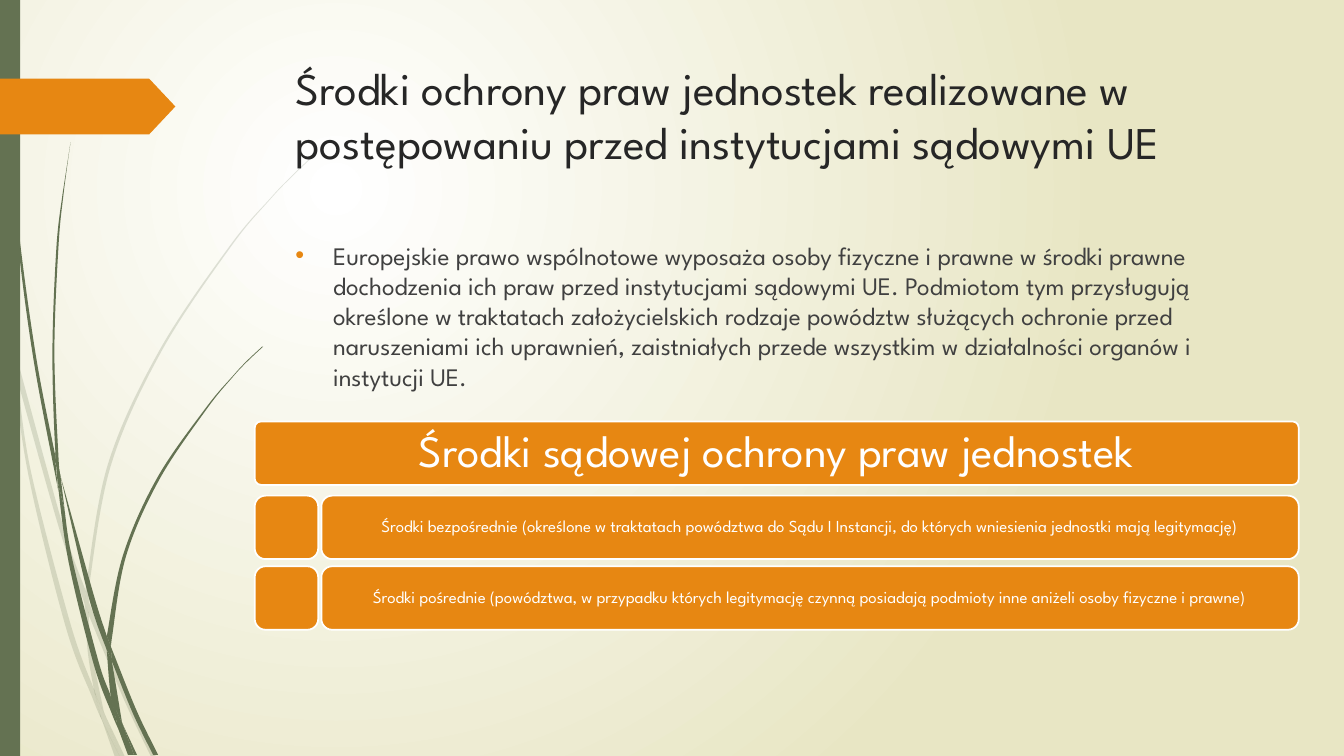
from itertools import chain
from lxml import etree
from pptx import Presentation
from pptx.dml.color import RGBColor
from pptx.enum import shapes, text
from pptx.oxml import ns
from pptx.util import Cm, Pt

FONT = "League Spartan"
COLORS = {
    "paper": "FFFFFF", "sand": "E8E6C4", "leaf": "647252", "orange": "E78712",
    "title": "262626", "body": "404040", "white": "FFFFFF",
}
GRASS_UNIT = 0.0254

PALE_GRASS = [
    ("11,350 9,322 0,282", "0,299 10,344 11,350"),
    ("14,345 62,520 85,586", "84,599 58,522 17,376"),
    ("88,596 92,607 127,692 155,751", "150,751 123,694 88,610"),
    ("119,751 124,751", "105,711"),
    ("11,350 17,376 31,469 70,619 93,683", "99,707 101,714 92,693 65,621 28,470 11,350"),
    ("84,599 87,646 93,683 96,692 105,711", "103,706 91,646 88,610 88,608 84,599"),
    ("88,584 110,462 160,349 229,245 268,198 290,175 312,154",
     "312,153 289,175 268,197 228,244 158,348 107,461 85,584", "85,586 88,596"),
    ("101,714 114,751", "119,751"),
    ("88,608 88,610 88,596", "85,586 84,599"),
    ("96,692 93,683 99,707 101,714 119,751", "105,711"),
]
DARK_GRASS = [
    ("3,0 4,48 7,110 17,233 33,355 56,477 57,481",
     "55,457 55,453 36,355 19,232 8,109 5,48 4,0"),
    ("60,472 88,592 106,645", "106,633 106,631 93,590 60,472"),
    ("110,641 113,649 136,706 157,749", "152,749 132,708 111,656"),
    ("57,477 68,557 93,659 111,708 117,722", "116,717 110,691 98,657 72,556 64,505"),
    ("60,472 58,453 54,349 58,245 63,193 70,141", "62,193 56,245 52,349 55,449 60,472"),
    ("133,749 136,749", "122,719"),
    ("57,477 64,505", "60,472 55,449 55,453"),
    ("111,633 125,552 158,476 205,406 231,374 245,359 261,344",
     "260,344 245,358 231,373 204,405 156,474 122,551 106,631", "110,641"),
    ("117,722 127,749", "131,749"),
    ("106,645 110,691 116,706 122,719", "121,716 111,656 109,651"),
    ("106,645 109,651 111,656 110,641", "106,631"),
    ("116,706 110,691 116,717 117,722 130,749", "133,749 122,719"),
]


def paint(shape, color, line=None):
    shape.shadow.inherit = False
    shape.fill.solid()
    shape.fill.fore_color.rgb = RGBColor.from_string(COLORS[color])
    if line:
        shape.line.color.rgb = RGBColor.from_string(COLORS[line])
        shape.line.width = Pt(1.25)
    else:
        shape.line.fill.background()


def write(paragraph, words, size, color):
    run = paragraph.add_run()
    run.text = words
    run.font.name = FONT
    run.font.size = Pt(size)
    run.font.color.rgb = RGBColor.from_string(COLORS[color])


def bend_edges(blade, edge_lengths):
    nodes = [pt.getparent() for pt in blade.element.iter(ns.qn("a:pt"))]
    corners = [(int(node[0].get("x")), int(node[0].get("y"))) for node in nodes]
    first = 0
    for length in edge_lengths:
        last = first + length - 1
        for i in range(first + 1, last + 1):
            before, after = corners[max(i - 2, first)], corners[min(i + 1, last)]
            start, end = corners[i - 1], corners[i]
            leave = [s + (e - b) / 6 for b, s, e in zip(before, start, end)]
            arrive = [e - (a - s) / 6 for s, e, a in zip(start, end, after)]
            curve = etree.Element(ns.qn("a:cubicBezTo"))
            for x, y in (leave, arrive, end):
                etree.SubElement(curve, ns.qn("a:pt"), x=str(round(x)), y=str(round(y)))
            nodes[i].getparent().replace(nodes[i], curve)
        first = last + 1


def add_grass(slide, box, blades, opacity=None):
    left, top = box
    clump = slide.shapes.add_group_shape()
    for edges in blades:
        pairs = [edge.split() for edge in edges]
        corners = [map(int, pair.split(",")) for pair in chain.from_iterable(pairs)]
        outline = [(Cm(left + x * GRASS_UNIT), Cm(top + y * GRASS_UNIT)) for x, y in corners]
        builder = clump.shapes.build_freeform(*outline[0])
        builder.add_line_segments(outline[1:], close=True)
        blade = builder.convert_to_shape()
        bend_edges(blade, map(len, pairs))
        paint(blade, "leaf")
        if opacity:
            tint = blade.element.spPr.find(ns.qn("a:solidFill"))[0]
            etree.SubElement(tint, ns.qn("a:alpha"), val=str(opacity * 1000))


def add_background(slide):
    fill = slide.background.fill
    fill.gradient()
    for stop, color in zip(fill.gradient_stops, ("paper", "sand")):
        stop.color.rgb = RGBColor.from_string(COLORS[color])
    gradient = slide.element.find(".//" + ns.qn("a:gradFill"))
    gradient.remove(gradient.find(ns.qn("a:lin")))
    circle = etree.SubElement(gradient, ns.qn("a:path"), path="circle")
    etree.SubElement(circle, ns.qn("a:fillToRect"),
                     l="50000", t="50000", r="100000", b="100000")


def add_side_decor(slide, box):
    left, top, width, height = box
    add_grass(slide, (left, top), PALE_GRASS, opacity=20)
    add_grass(slide, (left, top), DARK_GRASS)
    stripe = slide.shapes.add_shape(
        shapes.MSO_SHAPE.RECTANGLE, Cm(left), Cm(top), Cm(width), Cm(height))
    paint(stripe, "leaf")
    arrow = slide.shapes.add_shape(
        shapes.MSO_SHAPE.PENTAGON, Cm(left), Cm(top + 1.98), Cm(4.42), Cm(1.41))
    arrow.adjustments[0] = 0.47
    paint(arrow, "orange")


def place(placeholder, box):
    placeholder.left, placeholder.top, placeholder.width, placeholder.height = map(Cm, box)
    placeholder.element.getparent().append(placeholder.element)
    frame = placeholder.text_frame
    frame.word_wrap = True
    frame.auto_size = text.MSO_AUTO_SIZE.NONE
    frame.vertical_anchor = text.MSO_ANCHOR.TOP
    paragraph = frame.paragraphs[0]
    paragraph.alignment = text.PP_ALIGN.LEFT
    return paragraph


def add_heading(slide, box):
    heading = place(slide.shapes.title, box)
    write(heading, "Środki ochrony praw jednostek realizowane w postępowaniu "
          "przed instytucjami sądowymi UE", 32.4, "title")


def add_introduction(slide, box):
    introduction = place(slide.placeholders[1], box)
    introduction.space_before = Pt(10)
    properties = introduction._p.get_or_add_pPr()
    properties.set("marL", str(Cm(0.95)))
    properties.set("indent", str(-Cm(0.95)))
    bullet_color = etree.SubElement(properties, ns.qn("a:buClr"))
    etree.SubElement(bullet_color, ns.qn("a:srgbClr"), val=COLORS["orange"])
    etree.SubElement(properties, ns.qn("a:buChar"), char="•")
    write(introduction, "Europejskie prawo wspólnotowe wyposaża osoby fizyczne i prawne w środki "
          "prawne dochodzenia ich praw przed instytucjami sądowymi UE. Podmiotom tym przysługują "
          "określone w traktatach założycielskich rodzaje powództw służących ochronie przed "
          "naruszeniami ich uprawnień, zaistniałych przede wszystkim w działalności organów i "
          "instytucji UE.", 18, "body")


def add_tile(diagram, box, rounding, words=None, size=12):
    tile = diagram.shapes.add_shape(shapes.MSO_SHAPE.ROUNDED_RECTANGLE, *map(Cm, box))
    tile.adjustments[0] = rounding
    paint(tile, "orange", line="white")
    if words:
        frame = tile.text_frame
        frame.word_wrap = True
        frame.vertical_anchor = text.MSO_ANCHOR.MIDDLE
        frame.margin_top = frame.margin_bottom = Cm(0.1)
        paragraph = frame.paragraphs[0]
        paragraph.alignment = text.PP_ALIGN.CENTER
        paragraph.line_spacing = 0.9
        write(paragraph, words, size, "white")


def add_remedies(slide, box):
    left, top, width, tile = box
    header_step, row_step, label_offset = 1.87, 1.78, 1.68
    diagram = slide.shapes.add_group_shape()
    add_tile(diagram, (left, top, width, tile), 0.1,
             "Środki sądowej ochrony praw jednostek", 32)
    remedies = [
        "Środki bezpośrednie (określone w traktatach powództwa do Sądu I Instancji, "
        "do których wniesienia jednostki mają legitymację)",
        "Środki pośrednie (powództwa, w przypadku których legitymację czynną posiadają "
        "podmioty inne aniżeli osoby fizyczne i prawne)",
    ]
    for row, remedy in enumerate(remedies):
        row_top = top + header_step + row * row_step
        add_tile(diagram, (left, row_top, tile, tile), 0.17)
        add_tile(diagram, (left + label_offset, row_top, width - label_offset, tile), 0.17, remedy)


def main():
    deck = Presentation()
    deck.slide_width, deck.slide_height = Cm(33.87), Cm(19.05)
    slide = deck.slides.add_slide(deck.slide_layouts[1])
    add_background(slide)
    add_side_decor(slide, (0, 0, 0.51, 19.05))
    add_heading(slide, (7.2, 1.38, 24.77, 3.53))
    add_introduction(slide, (7.19, 5.92, 24.77, 10.49))
    add_remedies(slide, (6.42, 10.62, 26.31, 1.6))
    deck.save("out.pptx")


if __name__ == "__main__":
    main()
